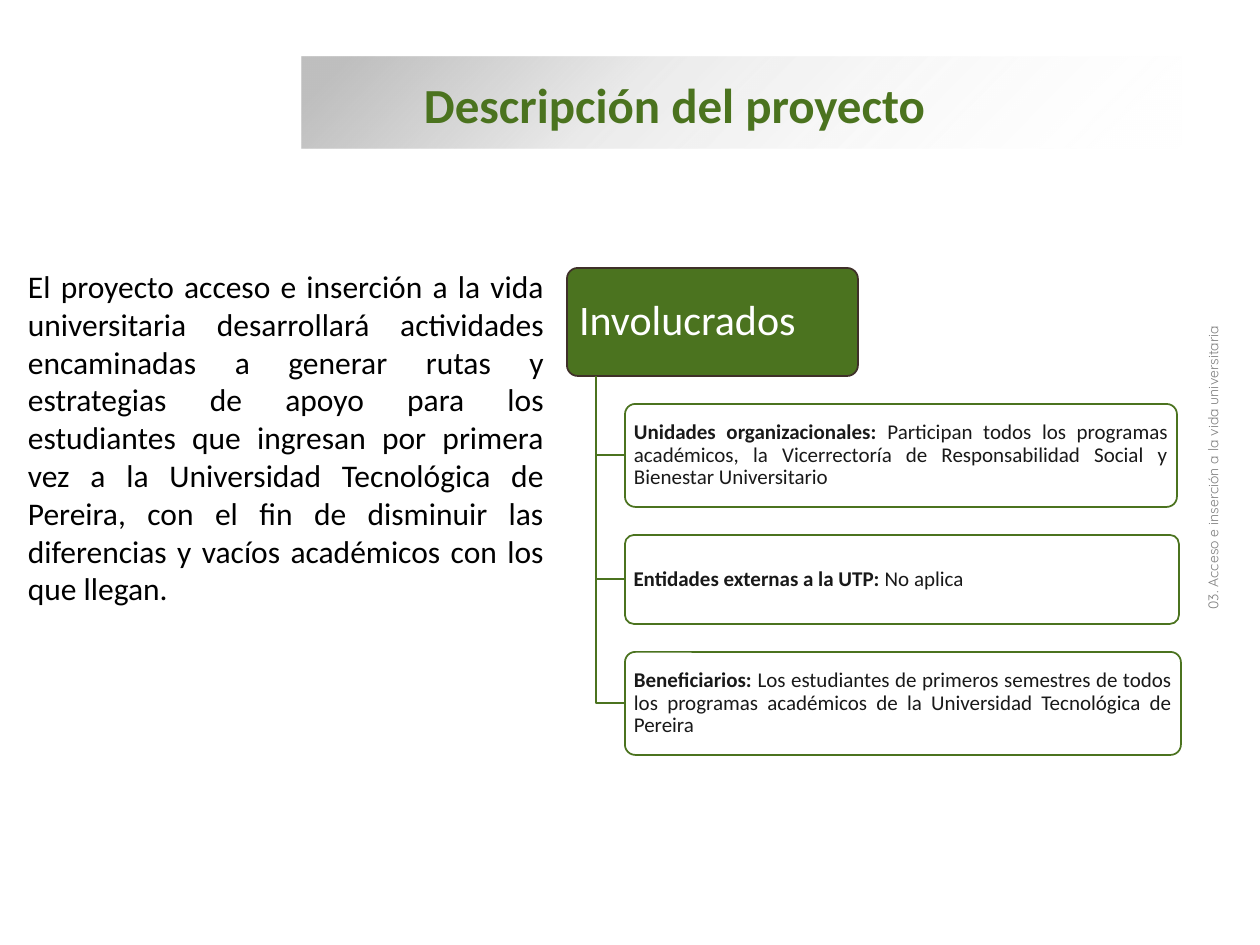
from pptx import Presentation
from pptx import util as u
from pptx.dml.color import RGBColor
from pptx.enum import shapes, text
from pptx.oxml import parse_xml
from pptx.oxml.ns import nsdecls, qn

PX = 914400 // 126
C = {"green": "4B731F", "edge": "3F3029", "white": "FFFFFF", "ink": "191919",
     "black": "000000", "band": "BFBFBF", "grey": "808080"}
LEFT, CENTER, JUSTIFY = (text.PP_ALIGN.LEFT, text.PP_ALIGN.CENTER,
                         text.PP_ALIGN.JUSTIFY)
TOP, MIDDLE = text.MSO_ANCHOR.TOP, text.MSO_ANCHOR.MIDDLE


def rgb(name):
    return RGBColor.from_string(C[name])


def px(*values):
    return [u.Emu(v * PX) for v in values]


def write(sp, runs, size, color, font="Calibri", align=LEFT, anchor=TOP,
          inset=(13, 6), spacing=None):
    tf = sp.text_frame
    tf.word_wrap = True
    tf.auto_size = text.MSO_AUTO_SIZE.NONE
    tf.vertical_anchor = anchor
    tf.margin_left = tf.margin_right = px(inset[0])[0]
    tf.margin_top = tf.margin_bottom = px(inset[1])[0]
    p = tf.paragraphs[0]
    p.alignment = align
    if spacing:
        p.line_spacing = spacing
    for words, bold in runs:
        r = p.add_run()
        r.text = words
        r.font.name, r.font.size, r.font.bold = font, u.Pt(size), bold
        r.font.color.rgb = rgb(color)


def add_box(s, kind, box, fill, line=None):
    sp = s.shapes.add_shape(kind, *px(*box))
    sp.shadow.inherit = False
    sp.fill.solid()
    sp.fill.fore_color.rgb = rgb(fill)
    if line:
        sp.line.color.rgb = rgb(line)
        sp.line.width = u.Pt(1)
    else:
        sp.line.fill.background()
    return sp


def add_node(s, box, fill, line):
    sp = add_box(s, shapes.MSO_SHAPE.ROUNDED_RECTANGLE, box, fill, line)
    sp.adjustments[0] = 0.1
    return sp


def add_title(s, box):
    x, y, w, h = box
    band = add_box(s, shapes.MSO_SHAPE.RECTANGLE, box, "white")
    band.fill.gradient()
    band.fill.gradient_angle = 315
    stops = "".join(
        f'<a:gs pos="{pos * 1000}"><a:srgbClr val="{C[color]}">'
        f'<a:alpha val="{alpha * 1000}"/></a:srgbClr></a:gs>'
        for pos, color, alpha in [(5, "band", 100), (37, "band", 31), (100, "white", 0)])
    old = band.element.spPr.find(qn("a:gradFill")).find(qn("a:gsLst"))
    old.getparent().replace(
        old, parse_xml(f'<a:gsLst {nsdecls("a")}>{stops}</a:gsLst>'))
    title = s.shapes.title
    title.element.addprevious(band.element)
    title.left, title.top, title.width, title.height = px(x + 109, y + 11, w - 98, h - 19)
    write(title, [("Descripción del proyecto", True)], 28, "green", anchor=MIDDLE)


def add_description(s, box):
    sp = s.shapes.add_textbox(*px(*box))
    write(sp, [("El proyecto acceso e inserción a la vida universitaria desarrollará "
                "actividades encaminadas a generar rutas y estrategias de apoyo para "
                "los estudiantes que ingresan por primera vez a la Universidad "
                "Tecnológica de Pereira, con el fin de disminuir las diferencias y "
                "vacíos académicos con los que llegan.", False)],
          18, "black", align=JUSTIFY)


def add_branch(s, x, y, end_x, end_y):
    builder = s.shapes.build_freeform(x, y, scale=PX)
    builder.add_line_segments([(x, end_y), (end_x, end_y)], close=False)
    sp = builder.convert_to_shape()
    sp.shadow.inherit = False
    sp.fill.background()
    sp.line.color.rgb = rgb("green")
    sp.line.width = u.Pt(1)


def add_stakeholders(s, box, groups):
    x, y, w, h = box
    gap, trunk = 28, x + w // 10
    leaf_x = x + w // 5
    root = add_node(s, box, "green", "edge")
    write(root, [("Involucrados", False)], 24, "white", anchor=MIDDLE,
          inset=(9, 6), spacing=0.9)
    top = y + h + gap
    for label, detail, leaf_w, leaf_h, align in groups:
        add_branch(s, trunk, y + h, leaf_x, top + leaf_h // 2)
        leaf = add_node(s, (leaf_x, top, leaf_w, leaf_h), "white", "green")
        color = leaf.element.spPr.find(qn("a:solidFill"))[0]
        color.append(parse_xml(f'<a:alpha {nsdecls("a")} val="90000"/>'))
        write(leaf, [(label + ": ", True), (detail, False)], 12, "ink",
              align=align, anchor=MIDDLE, inset=(6, 6), spacing=0.9)
        top += leaf_h + gap


def add_side_label(s, box):
    sp = s.shapes.add_textbox(*px(*box))
    sp.rotation = 270
    write(sp, [("03. Acceso e inserción a la vida universitaria", False)],
          8, "grey", font="Quicksand", align=CENTER)


def main():
    prs = Presentation()
    prs.slide_width, prs.slide_height = u.Inches(10), u.Inches(7.5)
    s = prs.slides.add_slide(prs.slide_layouts[5])
    add_description(s, (15, 261, 542, 357))
    add_stakeholders(s, (567, 268, 291, 108), [
        ("Unidades organizacionales",
         "Participan todos los programas académicos, la Vicerrectoría de "
         "Responsabilidad Social y Bienestar Universitario", 552, 103, JUSTIFY),
        ("Entidades externas a la UTP", "No aplica", 554, 89, LEFT),
        ("Beneficiarios",
         "Los estudiantes de primeros semestres de todos los programas "
         "académicos de la Universidad Tecnológica de Pereira", 556, 103, JUSTIFY),
    ])
    add_title(s, (302, 57, 879, 91))
    add_side_label(s, (917, 444, 610, 47))
    prs.save("out.pptx")


if __name__ == "__main__":
    main()
